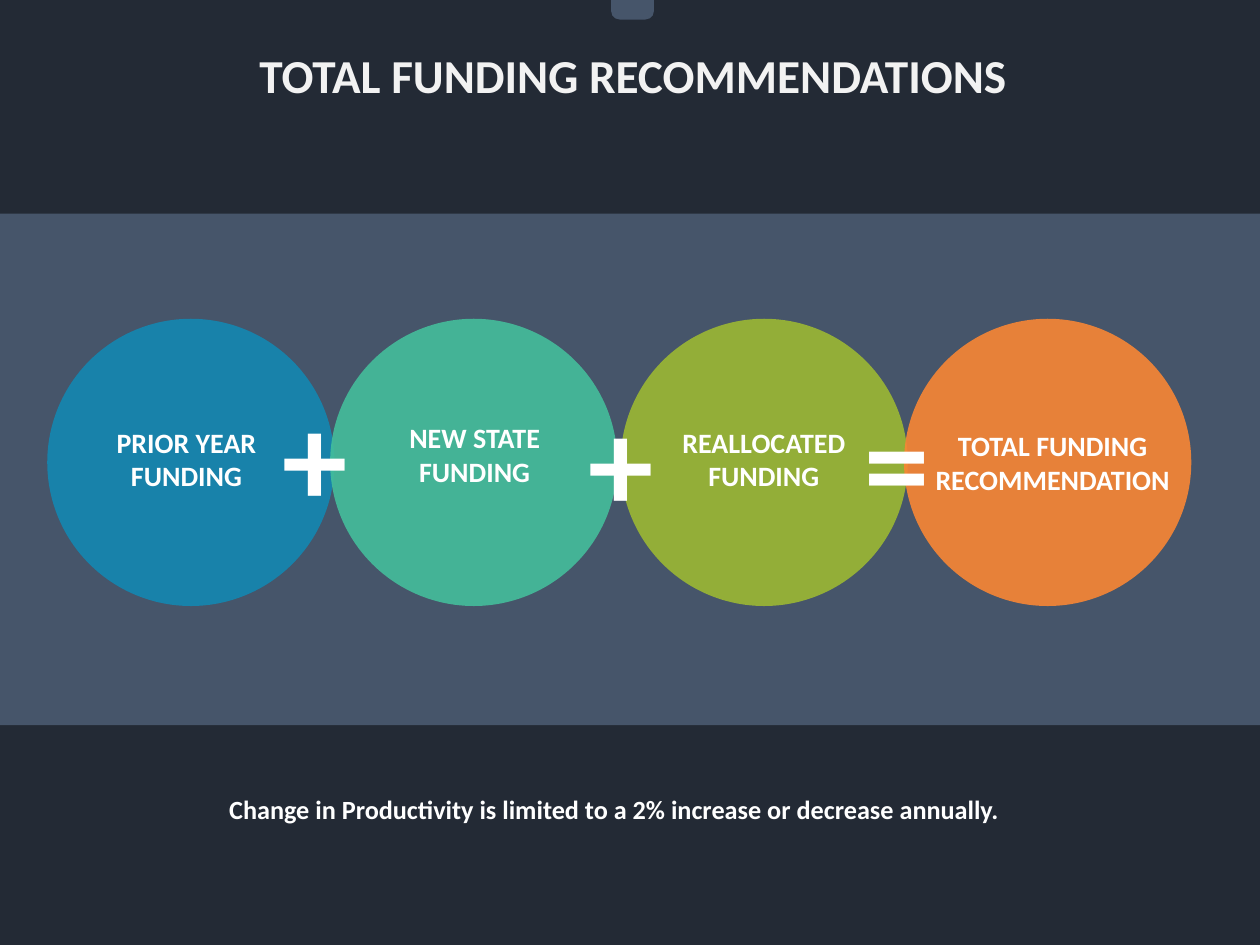
"""Build the total funding recommendations slide."""
from lxml import etree
from pptx import Presentation
from pptx.dml.color import RGBColor
from pptx.enum.shapes import MSO_SHAPE
from pptx.enum.text import MSO_ANCHOR, MSO_AUTO_SIZE, PP_ALIGN
from pptx.oxml.ns import qn
from pptx.util import Inches, Pt

OVAL, RECTANGLE, ROUNDED = MSO_SHAPE.OVAL, MSO_SHAPE.RECTANGLE, MSO_SHAPE.ROUNDED_RECTANGLE
TOP, MIDDLE = MSO_ANCHOR.TOP, MSO_ANCHOR.MIDDLE
CENTER, NO_AUTOFIT = PP_ALIGN.CENTER, MSO_AUTO_SIZE.NONE
NAVY = RGBColor(0x23, 0x2A, 0x35)
SLATE = RGBColor(0x46, 0x55, 0x6A)
PALE = RGBColor(0xF2, 0xF2, 0xF2)
WHITE = RGBColor(0xFF, 0xFF, 0xFF)
BLUE = RGBColor(0x14, 0x87, 0xB1)
TEAL = RGBColor(0x44, 0xBE, 0x9B)
GREEN = RGBColor(0x9C, 0xB8, 0x33)
ORANGE = RGBColor(0xF9, 0x86, 0x34)


def write_text(shape, text, size, color=WHITE, spacing=1.0, anchor=TOP, margins=(0.1, 0.05)):
    frame = shape.text_frame
    side, edge = (Inches(margin) for margin in margins)
    frame_format = {
        "word_wrap": True, "auto_size": NO_AUTOFIT, "vertical_anchor": anchor,
        "margin_left": side, "margin_right": side, "margin_top": edge, "margin_bottom": edge,
    }
    for name, value in frame_format.items():
        setattr(frame, name, value)
    paragraph = frame.paragraphs[0]
    paragraph.text = text
    paragraph.alignment = CENTER
    paragraph.line_spacing = spacing
    for run in paragraph.runs:
        for name, value in {"name": "Calibri", "size": Pt(size), "bold": True}.items():
            setattr(run.font, name, value)
        run.font.color.rgb = color


def add_plain_shape(kind, box, color):
    shape = slide.shapes.add_shape(kind, *map(Inches, box))
    shape.shadow.inherit = False
    shape.fill.solid()
    shape.fill.fore_color.rgb = color
    shape.line.fill.background()
    return shape


presentation = Presentation()
presentation.slide_width = Inches(20)
presentation.slide_height = Inches(15)
slide = presentation.slides.add_slide(presentation.slide_layouts[5])
slide.background.fill.solid()
slide.background.fill.fore_color.rgb = NAVY

tab = add_plain_shape(ROUNDED, (9.7, -0.31, 0.68, 0.62), SLATE)
tab.adjustments[0] = 0.22
add_plain_shape(RECTANGLE, (0, 3.39, 20, 8.12), SLATE)

title = slide.shapes.title
title_place = {"left": 1.26, "top": 0.71, "width": 17.58, "height": 0.94}
for name, value in title_place.items():
    setattr(title, name, Inches(value))
write_text(title, "TOTAL FUNDING RECOMMENDATIONS", 54, PALE, anchor=MIDDLE, margins=(0, 0.11))

footnote = slide.shapes.add_textbox(Inches(0.96), Inches(12.34), Inches(17.58), Inches(1.39))
write_text(footnote, "Change in Productivity is limited to a 2% increase or decrease annually.",
           30, spacing=1.5, margins=(0, 0))

for left, color in ((0.75, BLUE), (5.24, TEAL), (9.85, GREEN), (14.35, ORANGE)):
    circle = add_plain_shape(OVAL, (left, 5.06, 4.56, 4.56), color)
    color_element = circle.fill._xPr.find(qn("a:solidFill"))[0]
    etree.SubElement(color_element, qn("a:alpha"), val="90000")

labels = (
    ("PRIOR YEAR\nFUNDING", 1.62, 6.7, 2.68),
    ("NEW STATE FUNDING", 5.82, 6.63, 3.43),
    ("REALLOCATED FUNDING", 10.41, 6.7, 3.43),
    ("TOTAL FUNDING RECOMMENDATION", 14.63, 6.76, 4.16),
)
for text, left, top, width in labels:
    label = slide.shapes.add_textbox(Inches(left), Inches(top), Inches(width), Inches(1.18))
    write_text(label, text, 32)

operators = (
    ("+", 3.66, 6.99, 1.36, 0.5),
    ("+", 8.51, 6, 2.61, 1.0),
    ("=", 12.9, 5.98, 2.61, 1.0),
)
for symbol, left, top, height, spacing in operators:
    operator = slide.shapes.add_textbox(Inches(left), Inches(top), Inches(2.68), Inches(height))
    write_text(operator, symbol, 149.3, spacing=spacing)

presentation.save("out.pptx")
